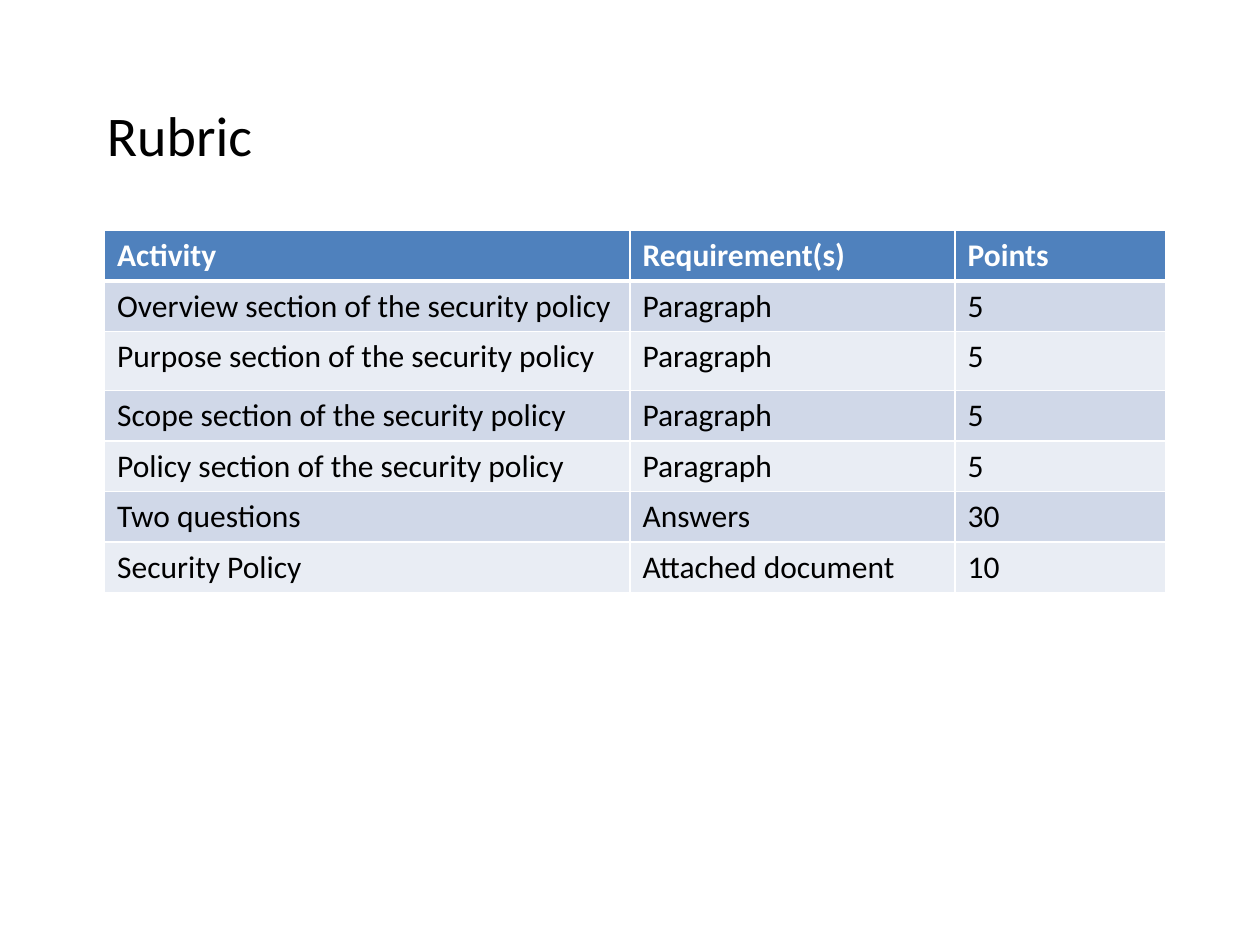
from lxml.etree import SubElement
from pptx import Presentation
from pptx.dml.color import RGBColor
from pptx.oxml.ns import qn
from pptx.util import Inches, Pt

FONT = "Calibri"
BLACK = RGBColor(0x00, 0x00, 0x00)
WHITE = RGBColor(0xFF, 0xFF, 0xFF)
HEADER_BLUE = RGBColor(0x4F, 0x81, 0xBD)
BAND_DARK = RGBColor(0xD0, 0xD8, 0xE8)
BAND_LIGHT = RGBColor(0xE9, 0xED, 0xF4)

COLUMN_WIDTHS = (4.17, 2.58, 1.67)
ROW_HEIGHTS = (0.4, 0.4, 0.47, 0.4, 0.4, 0.4, 0.4)
RUBRIC = (
    ("Activity", "Requirement(s)", "Points"),
    ("Overview section of the security policy", "Paragraph", "5"),
    ("Purpose section of the security policy", "Paragraph", "5"),
    ("Scope section of the security policy", "Paragraph", "5"),
    ("Policy section of the security policy", "Paragraph", "5"),
    ("Two questions", "Answers", "30"),
    ("Security Policy", "Attached document", "10"),
)


def add_run(paragraph, text, size, color, bold=False):
    """Append a formatted run to a paragraph."""
    run = paragraph.add_run()
    run.text = text
    run.font.name = FONT
    run.font.size = Pt(size)
    run.font.bold = bold
    run.font.color.rgb = color


def add_title(slide, text):
    """Add the slide heading."""
    shape = slide.shapes.add_textbox(Inches(0.75), Inches(0.75), Inches(9), Inches(0.65))
    shape.text_frame.word_wrap = True
    add_run(shape.text_frame.paragraphs[0], text, 32, BLACK)


def set_borders(cell, bottom_width=1, top_width=1):
    """Draw white lines around a cell."""
    properties = cell._tc.get_or_add_tcPr()
    widths = {"a:lnL": 1, "a:lnR": 1, "a:lnT": top_width, "a:lnB": bottom_width}
    for tag, width in widths.items():
        line = SubElement(properties, qn(tag), w=str(Pt(width)))
        fill = SubElement(line, qn("a:solidFill"))
        SubElement(fill, qn("a:srgbClr"), val=str(WHITE))


def fill_cell(cell, text, row_index):
    """Write one cell in its header or band style."""
    is_header = row_index == 0
    set_borders(cell, 3 if is_header else 1, 3 if row_index == 1 else 1)
    cell.fill.solid()
    band = BAND_DARK if row_index % 2 else BAND_LIGHT
    cell.fill.fore_color.rgb = HEADER_BLUE if is_header else band
    color = WHITE if is_header else BLACK
    add_run(cell.text_frame.paragraphs[0], text, 18, color, is_header)


def add_rubric_table(slide):
    """Add the table of activities, requirements and points."""
    table = slide.shapes.add_table(
        len(RUBRIC), len(COLUMN_WIDTHS), Inches(0.83), Inches(1.83),
        Inches(sum(COLUMN_WIDTHS)), Inches(sum(ROW_HEIGHTS)),
    ).table
    for column, width in zip(table.columns, COLUMN_WIDTHS):
        column.width = Inches(width)
    for row_index, (row, height) in enumerate(zip(table.rows, ROW_HEIGHTS)):
        row.height = Inches(height)
        for cell, text in zip(row.cells, RUBRIC[row_index]):
            fill_cell(cell, text, row_index)


def main():
    """Build and save the rubric slide."""
    presentation = Presentation()
    presentation.slide_width = Inches(10)
    presentation.slide_height = Inches(7.5)
    slide = presentation.slides.add_slide(presentation.slide_layouts[6])
    add_title(slide, "Rubric")
    add_rubric_table(slide)
    presentation.save("out.pptx")


if __name__ == "__main__":
    main()
